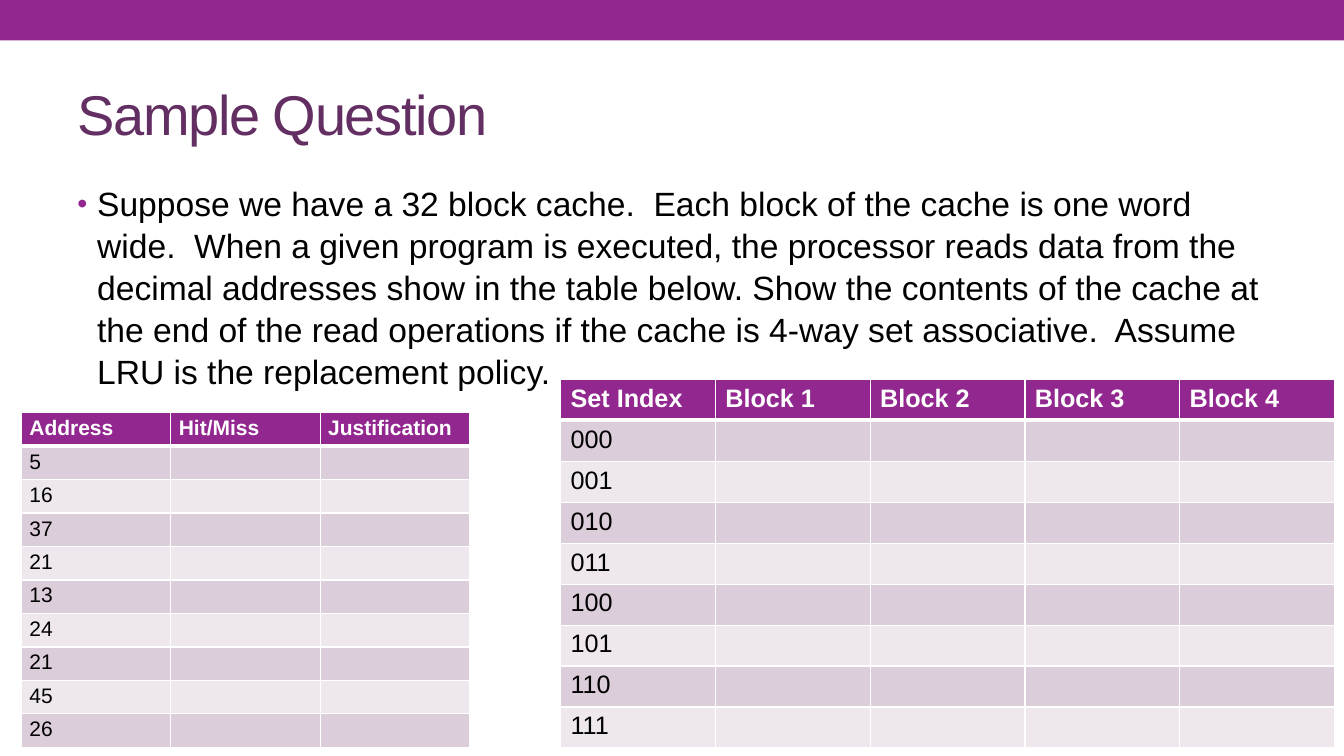
from lxml.etree import SubElement
from pptx import Presentation
from pptx.dml.color import RGBColor
from pptx.enum.shapes import MSO_SHAPE as Shape
from pptx.enum.text import MSO_ANCHOR as Anchor, PP_ALIGN as Align
from pptx.oxml.ns import qn
from pptx.util import Cm, Pt

PURPLE = RGBColor(0x92, 0x27, 0x8F)
PLUM = RGBColor(0x63, 0x2E, 0x62)
DARK_BAND = RGBColor(0xDC, 0xCD, 0xDB)
LIGHT_BAND = RGBColor(0xEE, 0xE8, 0xEE)
WHITE = RGBColor(0xFF, 0xFF, 0xFF)
BLACK = RGBColor(0, 0, 0)
FONT = "Arial"

QUESTION = (
    "Suppose we have a 32 block cache.  Each block of the cache is one word wide. "
    " When a given program is executed, the processor reads data from the decimal "
    "addresses show in the table below. Show the contents of the cache at the end of "
    "the read operations if the cache is 4-way set associative.  Assume LRU is the "
    "replacement policy."
)
ADDRESSES = [5, 16, 37, 21, 13, 24, 21, 45, 26]
SET_COUNT = 8


def format_runs(paragraph, size, color, bold=False):
    for run in paragraph.runs:
        run.font.name = FONT
        run.font.size = Pt(size)
        run.font.bold = bold
        run.font.color.rgb = color


def add_top_bar(slide, width):
    bar = slide.shapes.add_shape(Shape.RECTANGLE, 0, 0, width, Cm(1.02))
    bar.shadow.inherit = False
    bar.fill.solid()
    bar.fill.fore_color.rgb = PURPLE
    bar.line.fill.background()


def set_title(slide, text):
    title = slide.shapes.title
    title.left, title.top = Cm(1.7), Cm(1.47)
    title.width, title.height = Cm(30.48), Cm(2.74)
    title.text_frame.text = text
    title.text_frame.vertical_anchor = Anchor.MIDDLE
    paragraph = title.text_frame.paragraphs[0]
    paragraph.alignment = Align.LEFT
    format_runs(paragraph, 40, PLUM)
    # Tighten the letters by one point
    paragraph.runs[0].font._element.set("spc", "-100")


def add_bullet_text(slide, text):
    box = slide.shapes.add_textbox(Cm(1.7), Cm(4.45), Cm(30.48), Cm(13.54))
    box.text_frame.word_wrap = True
    box.text_frame.text = text
    paragraph = box.text_frame.paragraphs[0]
    paragraph.line_spacing = 1.04
    paragraph.space_before = Pt(4.8)
    format_runs(paragraph, 24, BLACK)
    # Hanging bullet in the accent colour
    properties = paragraph._p.get_or_add_pPr()
    properties.set("marL", str(Cm(0.5)))
    properties.set("indent", str(-Cm(0.5)))
    bullet_color = SubElement(properties, qn("a:buClr"))
    SubElement(bullet_color, qn("a:srgbClr"), val=str(PURPLE))
    SubElement(properties, qn("a:buSzPct"), val="85000")
    SubElement(properties, qn("a:buFont"), typeface=FONT)
    SubElement(properties, qn("a:buChar"), char="•")


def set_borders(cell, top=1, bottom=1):
    properties = cell._tc.get_or_add_tcPr()
    for side, points in (("L", 1), ("R", 1), ("T", top), ("B", bottom)):
        line = SubElement(properties, qn(f"a:ln{side}"), w=str(Pt(points)))
        fill = SubElement(line, qn("a:solidFill"))
        SubElement(fill, qn("a:srgbClr"), val=str(WHITE))


def fill_cell(cell, text, row_index, size, margin):
    is_header = row_index == 0
    cell.margin_left = cell.margin_right = margin
    cell.margin_top = cell.margin_bottom = margin // 2
    set_borders(cell, top=3 if row_index == 1 else 1, bottom=3 if is_header else 1)
    cell.fill.solid()
    band = DARK_BAND if row_index % 2 else LIGHT_BAND
    cell.fill.fore_color.rgb = PURPLE if is_header else band
    paragraph = cell.text_frame.paragraphs[0]
    if text:
        paragraph.text = text
        format_runs(paragraph, size, WHITE if is_header else BLACK, is_header)
    else:
        # Keep blank cells as low as the filled ones
        SubElement(paragraph._p, qn("a:endParaRPr"), sz=str(size * 100))


def add_answer_table(slide, left, top, width, height, headers, labels, size, margin):
    blanks = [""] * (len(headers) - 1)
    rows = [headers] + [[label] + blanks for label in labels]
    table = slide.shapes.add_table(
        len(rows), len(headers), left, top, width, height
    ).table
    for row_index, row in enumerate(rows):
        for column_index, text in enumerate(row):
            cell = table.cell(row_index, column_index)
            fill_cell(cell, text, row_index, size, margin)


def main():
    presentation = Presentation()
    presentation.slide_width, presentation.slide_height = Cm(33.87), Cm(19.05)
    slide = presentation.slides.add_slide(presentation.slide_layouts[5])

    # Heading and question
    add_top_bar(slide, presentation.slide_width)
    set_title(slide, "Sample Question")
    add_bullet_text(slide, QUESTION)

    # Read operations
    add_answer_table(
        slide, Cm(0.54), Cm(10.4), Cm(11.3), Cm(8.43),
        ["Address", "Hit/Miss", "Justification"],
        [str(address) for address in ADDRESSES], 15, Cm(0.2),
    )

    # Cache contents
    add_answer_table(
        slide, Cm(14.13), Cm(9.56), Cm(19.5), Cm(9.29),
        ["Set Index"] + [f"Block {number}" for number in range(1, 5)],
        [f"{index:03b}" for index in range(SET_COUNT)], 18, Cm(0.25),
    )

    presentation.save("out.pptx")


if __name__ == "__main__":
    main()
